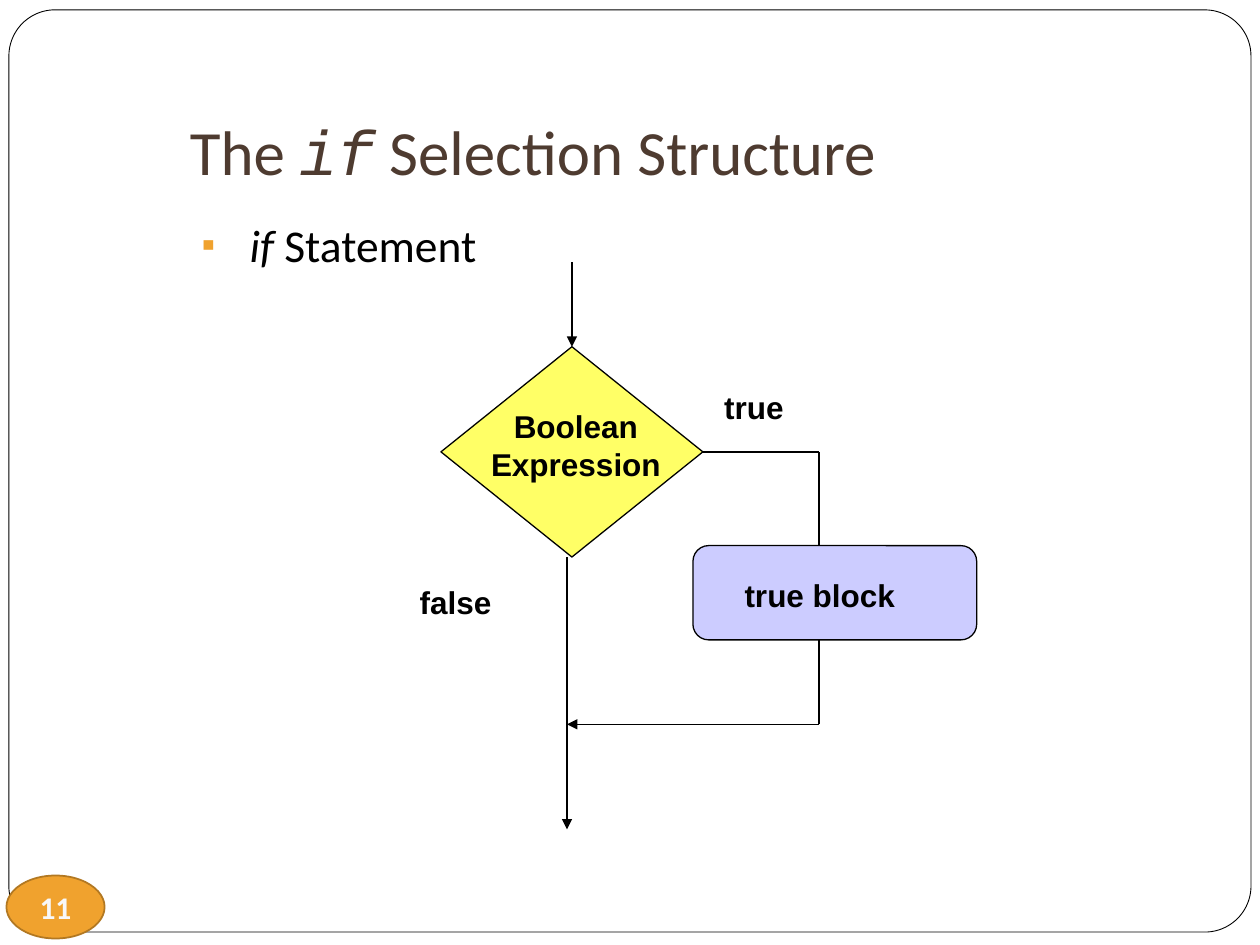
from lxml import etree
from pptx import Presentation
from pptx import util as u
from pptx.dml.color import RGBColor
from pptx.enum import shapes, text
from pptx.oxml.ns import qn

BLACK = RGBColor(0x00, 0x00, 0x00)
BROWN = RGBColor(0x4E, 0x3B, 0x30)
ORANGE = RGBColor(0xF0, 0xA2, 0x2E)
DARK_ORANGE = RGBColor(0xB2, 0x78, 0x22)
YELLOW = RGBColor(0xFF, 0xFF, 0x66)
LILAC = RGBColor(0xCC, 0xCC, 0xFF)
PALE = RGBColor(0xF8, 0xF8, 0xF8)

# Content: runs are (text, font, italic)
TITLE = [("The ", "Calibri", False), ("if", "Courier New", True),
         (" Selection Structure", "Calibri", False)]
BULLET = [(" ", "Calibri", False), ("if", "Calibri", True),
          (" Statement", "Calibri", False)]
NUMBER = "11"

# Flowchart geometry in cm: left, top, width, height
DECISION = (8.89, 6.99, 5.28, 4.24)
BLOCK = (13.97, 11, 5.72, 1.9)
ENTRY_X, EXIT_X, BRANCH_X = 11.53, 11.43, 16.51
ENTRY_Y, JOIN_Y, EXIT_Y = 5.29, 14.6, 16.72
DECISION_MID = DECISION[1] + DECISION[3] / 2
DECISION_RIGHT = DECISION[0] + DECISION[2]
DECISION_BOTTOM = DECISION[1] + DECISION[3]
BLOCK_BOTTOM = BLOCK[1] + BLOCK[3]

# Lines: start, end, has arrowhead
LINES = [
    ((ENTRY_X, ENTRY_Y), (ENTRY_X, DECISION[1]), True),
    ((EXIT_X, DECISION_BOTTOM), (EXIT_X, EXIT_Y), True),
    ((BRANCH_X, DECISION_MID), (DECISION_RIGHT, DECISION_MID), False),
    ((BRANCH_X, DECISION_MID), (BRANCH_X, BLOCK[1]), False),
    ((BRANCH_X, BLOCK_BOTTOM), (BRANCH_X, JOIN_Y), False),
    ((BRANCH_X, JOIN_Y), (EXIT_X, JOIN_Y), True),
]

# Labels: paragraphs, box, (side, top) insets, wrap, alignment
LEFT, CENTER = text.PP_ALIGN.LEFT, text.PP_ALIGN.CENTER
LABELS = [
    (["true block"], (14.76, 11.48, 3.58, 1.02), (0.25, 0.13), False, LEFT),
    (["Boolean", "Expression"], (9.63, 8.08, 3.96, 1.8), (0.25, 0.13), False, CENTER),
    (["true"], (14.6, 7.82, 1.7, 0.76), (0, 0), True, LEFT),
    (["false"], (8.46, 11.63, 2.11, 1.02), (0, 0.13), True, LEFT),
]


def cm(values):
    return [u.Cm(v) for v in values]


def place(sp, box):
    sp.left, sp.top, sp.width, sp.height = cm(box)


def set_insets(tf, side, top, bottom):
    tf.margin_left = tf.margin_right = u.Cm(side)
    tf.margin_top, tf.margin_bottom = u.Cm(top), u.Cm(bottom)


def add_run(p, words, font, size, color, bold=False, italic=False):
    r = p.add_run()
    r.text = words
    r.font.name, r.font.size = font, u.Pt(size)
    r.font.bold, r.font.italic = bold, italic
    r.font.color.rgb = color


def add_shape(s, kind, box, fill, line=BLACK, width=0.75):
    sp = s.shapes.add_shape(kind, *cm(box))
    sp.shadow.inherit = False
    if fill is None:
        sp.fill.background()
    else:
        sp.fill.solid()
        sp.fill.fore_color.rgb = fill
    sp.line.color.rgb = line
    sp.line.width = u.Pt(width)
    return sp


def add_line(s, start, end, arrow):
    c = s.shapes.add_connector(shapes.MSO_CONNECTOR.STRAIGHT, *cm(start + end))
    c.line.color.rgb = BLACK
    c.line.width = u.Pt(0.75)
    if arrow:
        etree.SubElement(c.line._get_or_add_ln(), qn("a:tailEnd"), type="triangle")
    etree.SubElement(c._element.spPr, qn("a:effectLst"))


def add_label(s, lines, box, insets, wrap, align):
    tf = s.shapes.add_textbox(*cm(box)).text_frame
    tf.word_wrap = wrap
    set_insets(tf, *insets, insets[1])
    for i, words in enumerate(lines):
        p = tf.add_paragraph() if i else tf.paragraphs[0]
        p.alignment = align
        add_run(p, words, "Arial", 18, BLACK, bold=True)


def fill_placeholder(sp, box, runs, size, color):
    place(sp, box)
    tf = sp.text_frame
    tf.word_wrap = True
    tf.auto_size = text.MSO_AUTO_SIZE.NONE
    p = tf.paragraphs[0]
    p.alignment = LEFT
    for words, font, italic in runs:
        add_run(p, words, font, size, color, italic=italic)
    return tf


def add_bullet(p, char, color, percent, indent):
    pPr = p._p.get_or_add_pPr()
    pPr.set("marL", str(u.Cm(indent)))
    pPr.set("indent", str(-u.Cm(indent)))
    clr = etree.SubElement(pPr, qn("a:buClr"))
    etree.SubElement(clr, qn("a:srgbClr"), val=str(color))
    etree.SubElement(pPr, qn("a:buSzPct"), val=str(percent * 1000))
    etree.SubElement(pPr, qn("a:buFont"), typeface="Arial")
    etree.SubElement(pPr, qn("a:buChar"), char=char)


def main():
    prs = Presentation()
    prs.slide_width, prs.slide_height = cm((25.4, 19.05))
    s = prs.slides.add_slide(prs.slide_layouts[1])
    kinds = shapes.MSO_SHAPE

    # Frame and slide number
    frame = add_shape(s, kinds.ROUNDED_RECTANGLE, (0.18, 0.2, 25.04, 18.59),
                      None, width=0.5)
    frame.adjustments[0] = 0.05
    badge = add_shape(s, kinds.OVAL, (0.13, 17.65, 1.98, 1.27),
                      ORANGE, DARK_ORANGE, 1)
    tf = badge.text_frame
    set_insets(tf, 0, 0, 0)
    tf.vertical_anchor = text.MSO_ANCHOR.MIDDLE
    tf.paragraphs[0].alignment = CENTER
    add_run(tf.paragraphs[0], NUMBER, "Calibri", 18, PALE, bold=True)

    # Title and bullet
    tf = fill_placeholder(s.shapes.title, (3.58, 2.11, 19.66, 1.93),
                          TITLE, 36, BROWN)
    tf.vertical_anchor = text.MSO_ANCHOR.BOTTOM
    set_insets(tf, 0.25, 0.13, 0.25)
    tf = fill_placeholder(s.placeholders[1], (3.81, 4.24, 7.82, 14.17),
                          BULLET, 26, BLACK)
    tf.paragraphs[0].space_before = u.Pt(5.8)
    add_bullet(tf.paragraphs[0], "▪", ORANGE, 85, 0.76)

    # Flowchart
    add_shape(s, kinds.DIAMOND, DECISION, YELLOW)
    add_shape(s, kinds.ROUNDED_RECTANGLE, BLOCK, LILAC)
    for line in LINES:
        add_line(s, *line)
    for label in LABELS:
        add_label(s, *label)

    prs.save("out.pptx")


if __name__ == "__main__":
    main()
